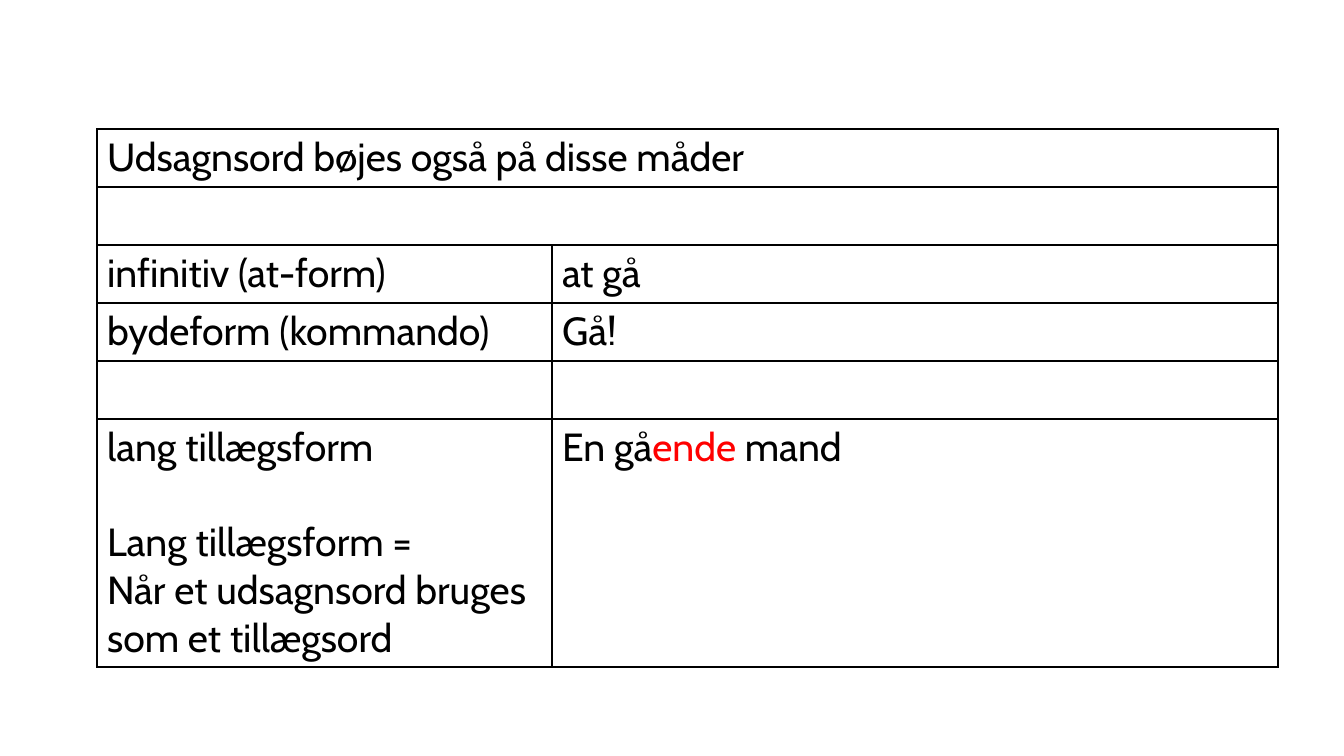
from dataclasses import dataclass

from lxml.etree import SubElement
from pptx import Presentation
from pptx.dml.color import RGBColor
from pptx.oxml.ns import qn
from pptx.util import Emu, Pt


@dataclass(frozen=True)
class Theme:
    font: str = "Cabin"
    size: int = 28
    gap: int = 34
    line: int = 1
    ink: str = "000000"
    mark: str = "FF0000"


THEME = Theme()
WIDE, HIGH = 1344, 756
COLS = [455, 726]
ROWS = [58] * 5 + [248]

# Each cell is a list of paragraphs; each paragraph is a list of (text, colour)
INK, MARK = THEME.ink, THEME.mark
FORMS = [
    [[[("Udsagnsord bøjes også på disse måder", INK)]], []],
    [[], []],
    [[[("infinitiv (at-form)", INK)]], [[("at gå", INK)]]],
    [[[("bydeform (kommando)", INK)]], [[("Gå!", INK)]]],
    [[], []],
    [
        [
            [("lang tillægsform", INK)],
            [("Lang tillægsform =", INK)],
            [("Når et udsagnsord bruges som et tillægsord", INK)],
        ],
        [[("En gå", INK), ("ende", MARK), (" mand", INK)]],
    ],
]
MERGED = (0, 1)
SPACED = "Lang tillægsform ="


def px(count):
    return Emu(round(count * 914400 / 100.8))


def rule(cell):
    """Draw a thin line on all four sides of a cell."""
    props = cell._tc.get_or_add_tcPr()
    for side in ("a:lnL", "a:lnR", "a:lnT", "a:lnB"):
        line = SubElement(props, qn(side), w=str(Pt(THEME.line)))
        fill = SubElement(line, qn("a:solidFill"))
        SubElement(fill, qn("a:srgbClr"), val=THEME.ink)


def write(cell, paras):
    """Fill a cell with its coloured runs."""
    frame = cell.text_frame
    for at, parts in enumerate(paras):
        para = frame.paragraphs[0] if at == 0 else frame.add_paragraph()
        for text, color in parts:
            run = para.add_run()
            run.text = text
            run.font.name = THEME.font
            run.font.size = Pt(THEME.size)
            run.font.color.rgb = RGBColor.from_string(color)
        if para.text == SPACED:
            para.space_before = Pt(THEME.gap)


def forms(slide, left, top, width, height):
    """Place the table of verb forms in the given box."""
    frame = slide.shapes.add_table(
        len(ROWS), len(COLS), px(left), px(top), px(width), px(height)
    )
    table = frame.table
    table.first_row = table.horz_banding = False

    # Column and row sizes share out the box
    for col, size in zip(table.columns, COLS):
        col.width = px(width * size / sum(COLS))
    for row, size in zip(table.rows, ROWS):
        row.height = px(height * size / sum(ROWS))

    # Cells
    for row, line in zip(table.rows, FORMS):
        for cell, paras in zip(row.cells, line):
            rule(cell)
            cell.fill.background()
            write(cell, paras)

    # Rows that run across both columns
    for at in MERGED:
        table.cell(at, 0).merge(table.cell(at, len(COLS) - 1))


def main():
    deck = Presentation()
    deck.slide_width, deck.slide_height = px(WIDE), px(HIGH)
    slide = deck.slides.add_slide(deck.slide_layouts[6])
    forms(slide, 97, 129, sum(COLS), sum(ROWS))
    deck.save("out.pptx")


if __name__ == "__main__":
    main()
